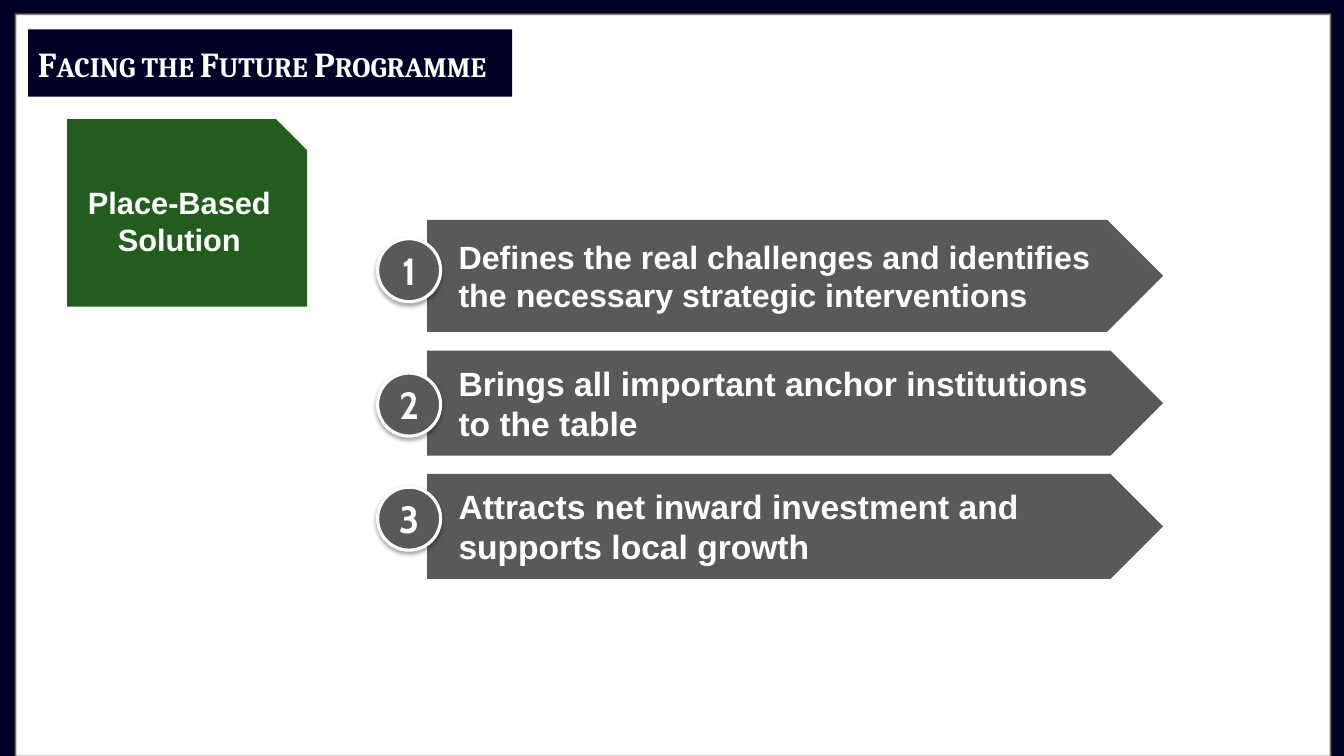
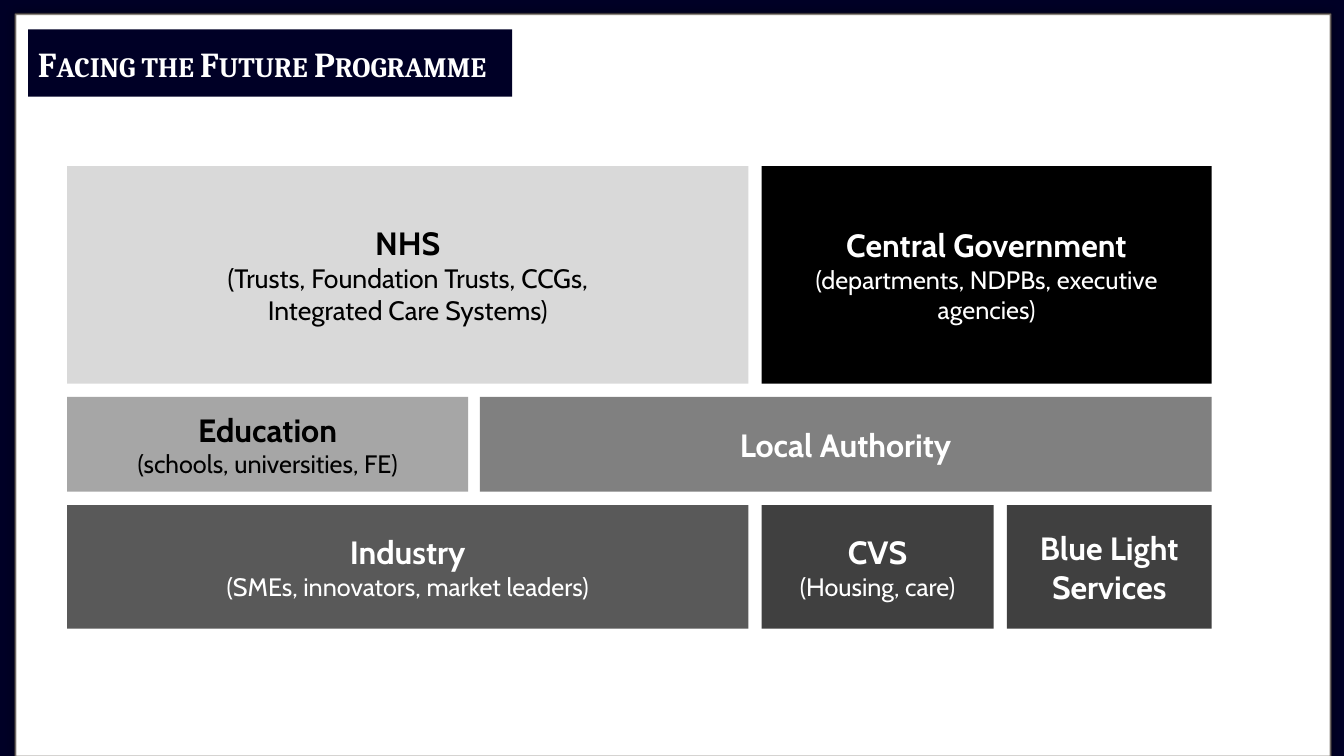
"""Builds the two Facing the Future Programme slides."""
from dataclasses import dataclass
from typing import NamedTuple

from lxml import etree
from pptx import Presentation
from pptx.dml.color import RGBColor
from pptx.enum.shapes import MSO_SHAPE
from pptx.enum.text import MSO_ANCHOR, PP_ALIGN
from pptx.oxml.ns import qn
from pptx.util import Pt

RECT, OVAL = MSO_SHAPE.RECTANGLE, MSO_SHAPE.OVAL
ARROW, SNIP = MSO_SHAPE.PENTAGON, MSO_SHAPE.SNIP_1_RECTANGLE
LEFT, CENTER = PP_ALIGN.LEFT, PP_ALIGN.CENTER
MIDDLE = MSO_ANCHOR.MIDDLE


@dataclass(frozen=True)
class Theme:
    navy: str = "000026"
    white: str = "FFFFFF"
    black: str = "000000"
    frame: str = "584F45"
    green: str = "225D1D"
    slate: str = "595959"
    charcoal: str = "404040"
    grey: str = "808080"
    silver: str = "A6A6A6"
    pale: str = "D9D9D9"
    serif: str = "Cambria"
    sans: str = "Arial"
    label: str = "Cabin"
    title_size: float = 25
    number_size: float = 27
    solution_size: float = 22
    head_size: float = 23
    note_size: float = 18


T = Theme()


class Box(NamedTuple):
    x: float
    y: float
    w: float
    h: float


class Step(NamedTuple):
    text: str
    top: float
    height: float
    size: float
    circle_top: float


class Cell(NamedTuple):
    width: float
    fill: str
    head: str
    note: str = ""
    color: str = T.white
    note_size: float = T.note_size


class Row(NamedTuple):
    height: float
    gap: float
    cells: list[Cell]


STEPS = [
    Step("Defines the real challenges and identifies the necessary strategic interventions",
         157, 80, 23, 170.5),
    Step("Brings all important anchor institutions to the table", 250.5, 75, 24, 266.5),
    Step("Attracts net inward investment and supports local growth", 338.5, 75, 24, 348),
]

GRID_X, GRID_Y, ROW_GAP = 48, 118.75, 9.5
ROWS = [
    Row(155.25, 9.5, [
        Cell(486.5, T.pale, "NHS",
             "(Trusts, Foundation Trusts, CCGs,\nIntegrated Care Systems)", T.black, 19),
        Cell(321.5, T.black, "Central Government", "(departments, NDPBs, executive agencies)"),
    ]),
    Row(67.75, 8.25, [
        Cell(286.5, T.silver, "Education", "(schools, universities, FE)", T.black),
        Cell(522.75, T.grey, "Local Authority"),
    ]),
    Row(88.25, 9.5, [
        Cell(486.5, T.slate, "Industry", "(SMEs, innovators, market leaders)"),
        Cell(165.75, T.charcoal, "CVS", "(Housing, care)"),
        Cell(146.25, T.charcoal, "Blue Light Services"),
    ]),
]


def rgb(color: str) -> RGBColor:
    return RGBColor.from_string(color)


def add_alpha(clr, percent: int) -> None:
    etree.SubElement(clr, qn("a:alpha"), val=str(percent * 1000))


def add_box(s, kind, box: Box, fill: str, line: str = "", width: float = 0):
    sp = s.shapes.add_shape(kind, *map(Pt, box))
    sp.shadow.inherit = False
    sp.fill.solid()
    sp.fill.fore_color.rgb = rgb(fill)
    if line:
        sp.line.color.rgb = rgb(line)
        sp.line.width = Pt(width)
    else:
        sp.line.fill.background()
    return sp


def add_shadow(sp, alpha: int, blur: float, dist: float, angle: int) -> None:
    effects = sp._element.spPr.find(qn("a:effectLst"))
    shadow = etree.SubElement(
        effects, qn("a:outerShdw"), blurRad=str(Pt(blur)), dist=str(Pt(dist)),
        dir=str(angle * 60000), algn="ctr", rotWithShape="0")
    add_alpha(etree.SubElement(shadow, qn("a:srgbClr"), val=T.black), alpha)


def start_text(sp, align):
    tf = sp.text_frame
    tf.word_wrap = True
    tf.vertical_anchor = MIDDLE
    p = tf.paragraphs[0]
    p.alignment = align
    return p


def add_run(p, text: str, size: float, font: str, color: str = T.white, bold: bool = True):
    r = p.add_run()
    r.text = text
    r.font.size, r.font.name, r.font.bold = Pt(size), font, bold
    r.font.color.rgb = rgb(color)
    return r


def add_framed_slide(prs):
    s = prs.slides.add_slide(prs.slide_layouts[6])
    frame = add_box(s, RECT, Box(11, 10, 939.5, 530.5), T.white, T.frame, 1.5)
    add_alpha(frame.line._ln.find(".//" + qn("a:srgbClr")), 70)
    add_shadow(frame, 40, 7, 0, 0)
    title = add_box(s, RECT, Box(20, 21, 345.75, 48), T.navy)
    r = add_run(start_text(title, LEFT), "Facing the Future Programme", T.title_size, T.serif)
    r.font._element.set("cap", "small")
    return s


def add_step_arrow(s, step: Step) -> None:
    sp = add_box(s, ARROW, Box(305, step.top, 525.75, step.height), T.slate)
    sp.text_frame.margin_left = Pt(22.5)
    add_run(start_text(sp, LEFT), step.text, step.size, T.sans)


def add_step_number(s, number: int, step: Step) -> None:
    sp = add_box(s, OVAL, Box(269.75, step.circle_top, 45, 45), T.slate, T.white, 2.25)
    add_shadow(sp, 35, 3.1, 1.8, 90)
    add_run(start_text(sp, CENTER), str(number), T.number_size, T.label)


def add_cell(s, cell: Cell, box: Box) -> None:
    p = start_text(add_box(s, RECT, box, cell.fill), CENTER)
    add_run(p, cell.head, T.head_size, T.label, cell.color)
    for line in cell.note.splitlines():
        p.add_line_break()
        add_run(p, line, cell.note_size, T.label, cell.color, False)


def build_solution(prs) -> None:
    s = add_framed_slide(prs)
    for step in STEPS:
        add_step_arrow(s, step)
    for number, step in enumerate(STEPS, 1):
        add_step_number(s, number, step)
    sp = add_box(s, SNIP, Box(48, 85, 171.5, 134), T.green)
    add_run(start_text(sp, CENTER), "Place-Based Solution", T.solution_size, T.sans)


def build_institutions(prs) -> None:
    s = add_framed_slide(prs)
    y = GRID_Y
    for row in ROWS:
        x = GRID_X
        for cell in row.cells:
            add_cell(s, cell, Box(x, y, cell.width, row.height))
            x += cell.width + row.gap
        y += row.height + ROW_GAP


def main() -> None:
    prs = Presentation()
    prs.slide_width, prs.slide_height = Pt(960), Pt(540)
    fill = prs.slide_master.background.fill
    fill.solid()
    fill.fore_color.rgb = rgb(T.navy)
    build_solution(prs)
    build_institutions(prs)
    prs.save("out.pptx")


if __name__ == "__main__":
    main()
